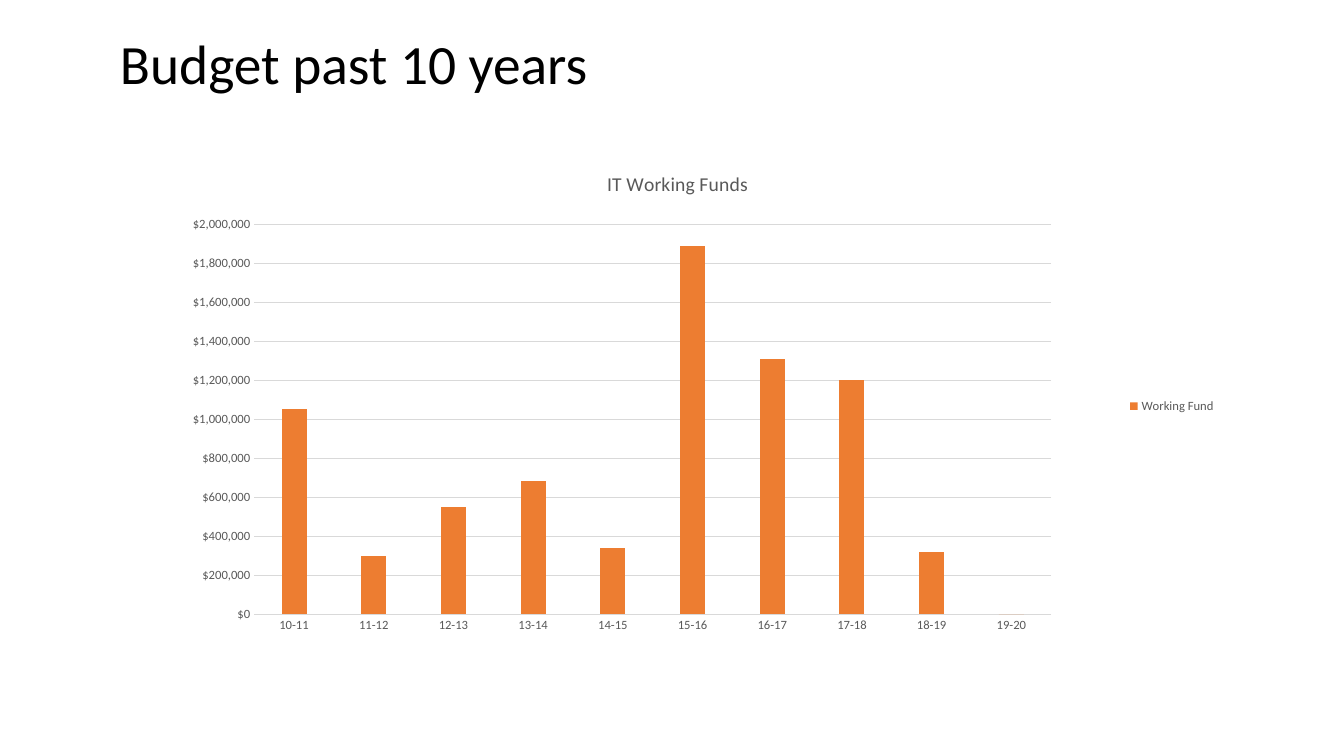
from dataclasses import dataclass

from lxml import etree
from pptx import Presentation
from pptx.chart.data import CategoryChartData
from pptx.dml.color import RGBColor
from pptx.enum.chart import XL_CHART_TYPE, XL_LEGEND_POSITION, XL_TICK_MARK
from pptx.enum.text import MSO_ANCHOR, MSO_AUTO_SIZE, PP_ALIGN
from pptx.oxml import parse_xml
from pptx.oxml.ns import nsdecls
from pptx.util import Inches, Pt

COLUMNS = XL_CHART_TYPE.COLUMN_CLUSTERED
LEGEND_RIGHT = XL_LEGEND_POSITION.RIGHT
NO_TICK = XL_TICK_MARK.NONE
TITLE_ONLY = 5
FONT = "Calibri"
BLACK, GREY, RULE, ORANGE = "000000", "595959", "D9D9D9", "ED7D31"


@dataclass
class Budget:
    year: str
    fund: int


BUDGETS = [
    Budget("10-11", 1050000),
    Budget("11-12", 300000),
    Budget("12-13", 550000),
    Budget("13-14", 680000),
    Budget("14-15", 340000),
    Budget("15-16", 1890000),
    Budget("16-17", 1310000),
    Budget("17-18", 1200000),
    Budget("18-19", 320000),
    Budget("19-20", 0),
]


def rgb(value: str) -> RGBColor:
    return RGBColor.from_string(value)


def set_font(font, size: float, color: str) -> None:
    font.name = FONT
    font.size = Pt(size)
    font.bold = False
    font.color.rgb = rgb(color)


def set_text(tf, text: str, *, size: float, color: str, align=None, spacing=None) -> None:
    p = tf.paragraphs[0]
    p.alignment = align
    p.line_spacing = spacing
    r = p.add_run()
    r.text = text
    set_font(r.font, size, color)


def set_line(line, color: str) -> None:
    line.color.rgb = rgb(color)
    line.width = Pt(0.75)


def manual_layout(inner: bool = False, **fractions: float):
    """Build a chart layout whose lengths are fractions of the chart."""
    layout = parse_xml(f"<c:layout {nsdecls('c')}><c:manualLayout/></c:layout>")
    manual = layout[0]
    ns = etree.QName(manual).namespace
    settings = {"layoutTarget": "inner"} if inner else {}
    settings |= {"xMode": "edge", "yMode": "edge"} | fractions
    for tag, value in settings.items():
        etree.SubElement(manual, f"{{{ns}}}{tag}").set("val", str(value))
    return layout


def add_title(slide) -> None:
    sp = slide.shapes.title
    sp.left, sp.top = Inches(1.09), Inches(0.36)
    sp.width, sp.height = Inches(11.5), Inches(2.22)
    tf = sp.text_frame
    tf.word_wrap = True
    tf.auto_size = MSO_AUTO_SIZE.NONE
    tf.vertical_anchor = MSO_ANCHOR.TOP
    tf.margin_top = 0
    set_text(tf, "Budget past 10 years", size=39.6, color=BLACK,
             align=PP_ALIGN.LEFT, spacing=0.9)


def format_axes(chart) -> None:
    for axis in (chart.category_axis, chart.value_axis):
        axis.major_tick_mark = axis.minor_tick_mark = NO_TICK
        set_font(axis.tick_labels.font, 9, GREY)
    set_line(chart.category_axis.format.line, RULE)
    values = chart.value_axis
    values.minimum_scale, values.maximum_scale = 0, 2000000
    values.major_unit = 200000
    values.tick_labels.number_format = '"$"#,##0'
    values.tick_labels.number_format_is_linked = False
    values.format.line.fill.background()
    set_line(values.major_gridlines.format.line, RULE)


def add_budget_chart(slide) -> None:
    data = CategoryChartData()
    data.categories = [b.year for b in BUDGETS]
    data.add_series("Working Fund", [b.fund for b in BUDGETS])
    chart = slide.shapes.add_chart(
        COLUMNS, Inches(1.33), Inches(1.45), Inches(10.83), Inches(5.16), data).chart
    set_font(chart.font, 10, BLACK)

    title = chart.chart_title
    set_text(title.text_frame, "IT Working Funds", size=14, color=GREY)
    title.include_in_layout = False
    for old in title._element.xpath("c:layout"):
        title._element.remove(old)
    title._element.xpath("c:tx")[0].addnext(manual_layout(x=0.43, y=0.04))

    chart.has_legend = True
    chart.legend.position = LEGEND_RIGHT
    chart.legend.include_in_layout = False
    set_font(chart.legend.font, 9, GREY)

    format_axes(chart)
    plot = chart.plots[0]
    plot.gap_width, plot.overlap = 219, -27
    plot.vary_by_categories = False
    fill = plot.series[0].format.fill
    fill.solid()
    fill.fore_color.rgb = rgb(ORANGE)

    area = chart._chartSpace.xpath("c:chart/c:plotArea")[0]
    for old in area.xpath("c:layout"):
        area.remove(old)
    area.insert(0, manual_layout(inner=True, x=0.11, y=0.15, w=0.73, h=0.75))


def main() -> None:
    prs = Presentation()
    prs.slide_width, prs.slide_height = Inches(13.33), Inches(7.5)
    slide = prs.slides.add_slide(prs.slide_layouts[TITLE_ONLY])
    add_title(slide)
    add_budget_chart(slide)
    prs.save("out.pptx")


if __name__ == "__main__":
    main()
